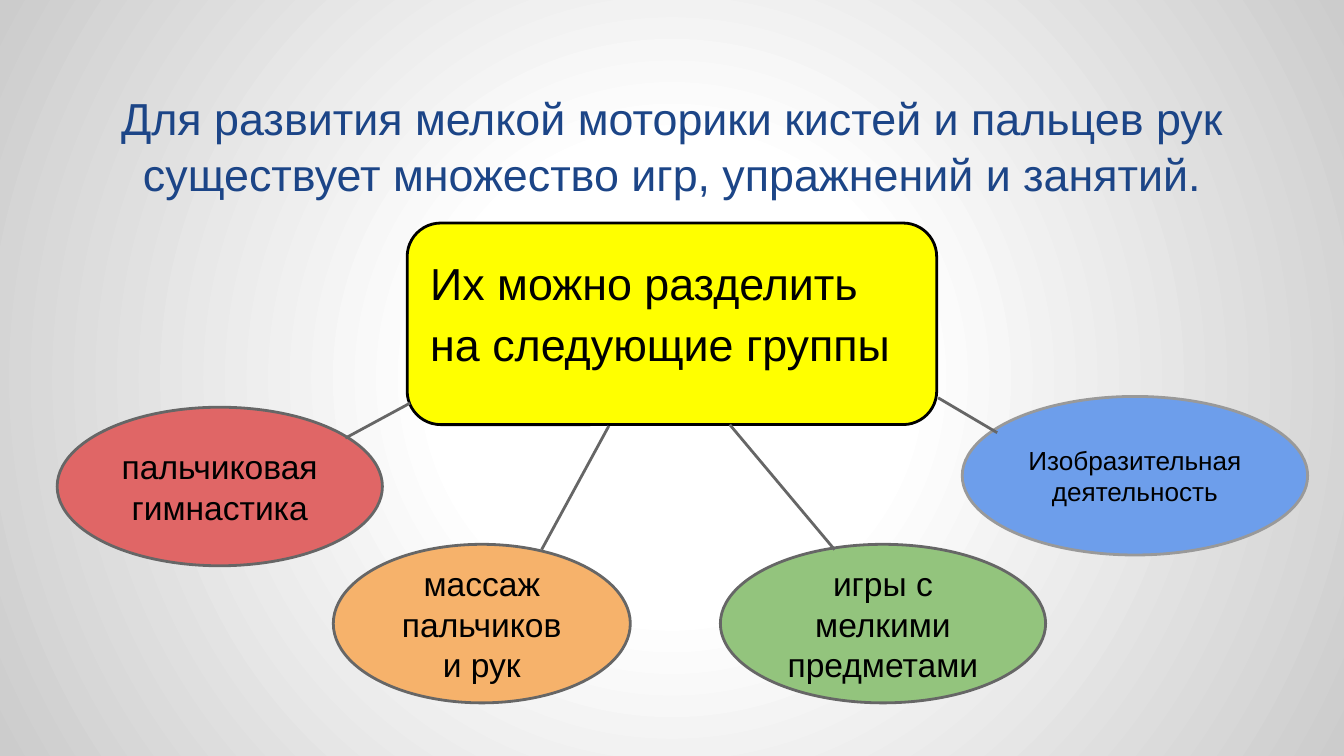
import pptx
import pptx.util
import pptx.dml.color
import pptx.enum.shapes
import pptx.enum.text
import pptx.oxml
import pptx.oxml.ns

THEME = {
    "font": "Arial", "title": "1C4587", "text": "000000", "line": "666666",
    "pale_line": "999999", "yellow": "FFFF00", "red": "E06666",
    "orange": "F6B26B", "green": "93C47D", "blue": "6D9EEB",
    "stops": [(0, "FFFFFF"), (30, "FFFFFF"), (100, "CCCCCC")],
    "large": 24, "medium": 18, "small": 14, "stroke": 1.5,
}
RGB = pptx.dml.color.RGBColor.from_string
MSO_SHAPE = pptx.enum.shapes.MSO_SHAPE
PP_ALIGN = pptx.enum.text.PP_ALIGN
MSO_ANCHOR = pptx.enum.text.MSO_ANCHOR

prs = pptx.Presentation()
prs.slide_width = pptx.util.Inches(10)
prs.slide_height = prs.slide_width * 9 // 16
col = prs.slide_width / 100
row = prs.slide_height / 56.25


def grid(x, y):
    return round(x * col), round(y * row)


def write(sp, text, size, color, align, anchor, spacing=1.0):
    tf = sp.text_frame
    tf.text = text
    tf.word_wrap = True
    tf.auto_size = pptx.enum.text.MSO_AUTO_SIZE.NONE
    tf.vertical_anchor = anchor
    tf.margin_left = tf.margin_right = tf.margin_top = tf.margin_bottom = round(col)
    p = tf.paragraphs[0]
    p.alignment = align
    p.line_spacing = spacing
    r = p.runs[0]
    r.font.name = THEME["font"]
    r.font.size = pptx.util.Pt(THEME[size])
    r.font.color.rgb = RGB(THEME[color])
    return tf


s = prs.slides.add_slide(prs.slide_layouts[5])

s.background.fill.gradient()
grad = s.element.find(".//" + pptx.oxml.ns.qn("a:gradFill"))
stops = "".join(
    f'<a:gs pos="{pos * 1000}"><a:srgbClr val="{color}"/></a:gs>'
    for pos, color in THEME["stops"]
)
grad.getparent().replace(grad, pptx.oxml.parse_xml(
    f'<a:gradFill {pptx.oxml.ns.nsdecls("a")} rotWithShape="1"><a:gsLst>{stops}</a:gsLst>'
    '<a:path path="circle"><a:fillToRect l="50000" t="50000" r="50000" b="50000"/></a:path>'
    '</a:gradFill>'
))

title = s.shapes.title
title.left, title.top = grid(5, 4.1)
title.width, title.height = grid(90, 11.8)
tf = write(
    title,
    "Для развития мелкой моторики кистей и пальцев рук существует множество игр, упражнений и занятий.",
    "large", "title", PP_ALIGN.CENTER, MSO_ANCHOR.BOTTOM, 1.04,
)
tf.paragraphs[0].space_after = pptx.util.Pt(8)

nodes = [
    (MSO_SHAPE.ROUNDED_RECTANGLE, 30.3, 16.6, 39.4, 15, "yellow", "text", "large",
     "Их можно разделить на следующие группы"),
    (MSO_SHAPE.OVAL, 4.25, 30.3, 24.2, 11.8, "red", "line", "medium", "пальчиковая гимнастика"),
    (MSO_SHAPE.OVAL, 71.6, 29.5, 25.7, 11.8, "blue", "pale_line", "small",
     "Изобразительная деятельность"),
    (MSO_SHAPE.OVAL, 53.6, 40.5, 24.2, 11.8, "green", "line", "medium",
     "игры с мелкими предметами"),
    (MSO_SHAPE.OVAL, 24.8, 40.5, 22.1, 11.8, "orange", "line", "medium",
     "массаж пальчиков и рук"),
]
for kind, x, y, w, h, fill, line, size, text in nodes:
    sp = s.shapes.add_shape(kind, *grid(x, y), *grid(w, h))
    sp.shadow.inherit = False
    sp.fill.solid()
    sp.fill.fore_color.rgb = RGB(THEME[fill])
    sp.line.color.rgb = RGB(THEME[line])
    sp.line.width = pptx.util.Pt(THEME["stroke"])
    is_hub = kind == MSO_SHAPE.ROUNDED_RECTANGLE
    align = PP_ALIGN.LEFT if is_hub else PP_ALIGN.CENTER
    tf = write(sp, text, size, "text", align, MSO_ANCHOR.MIDDLE, 1.15 if is_hub else 1.0)
    if is_hub:
        tf.margin_bottom = round(3.2 * row)

links = [
    (30.5, 30, 25.7, 32.6),
    (45.3, 31.7, 40.3, 40.9),
    (54.3, 31.6, 62.1, 40.9),
    (69.8, 29.6, 74.2, 32.2),
]
for x1, y1, x2, y2 in links:
    link = s.shapes.add_connector(
        pptx.enum.shapes.MSO_CONNECTOR.STRAIGHT, *grid(x1, y1), *grid(x2, y2))
    link.line.color.rgb = RGB(THEME["line"])
    link.line.width = pptx.util.Pt(THEME["stroke"])
    link.element.spPr.append(pptx.oxml.parse_xml(
        f'<a:effectLst {pptx.oxml.ns.nsdecls("a")}/>'))

prs.save("out.pptx")
